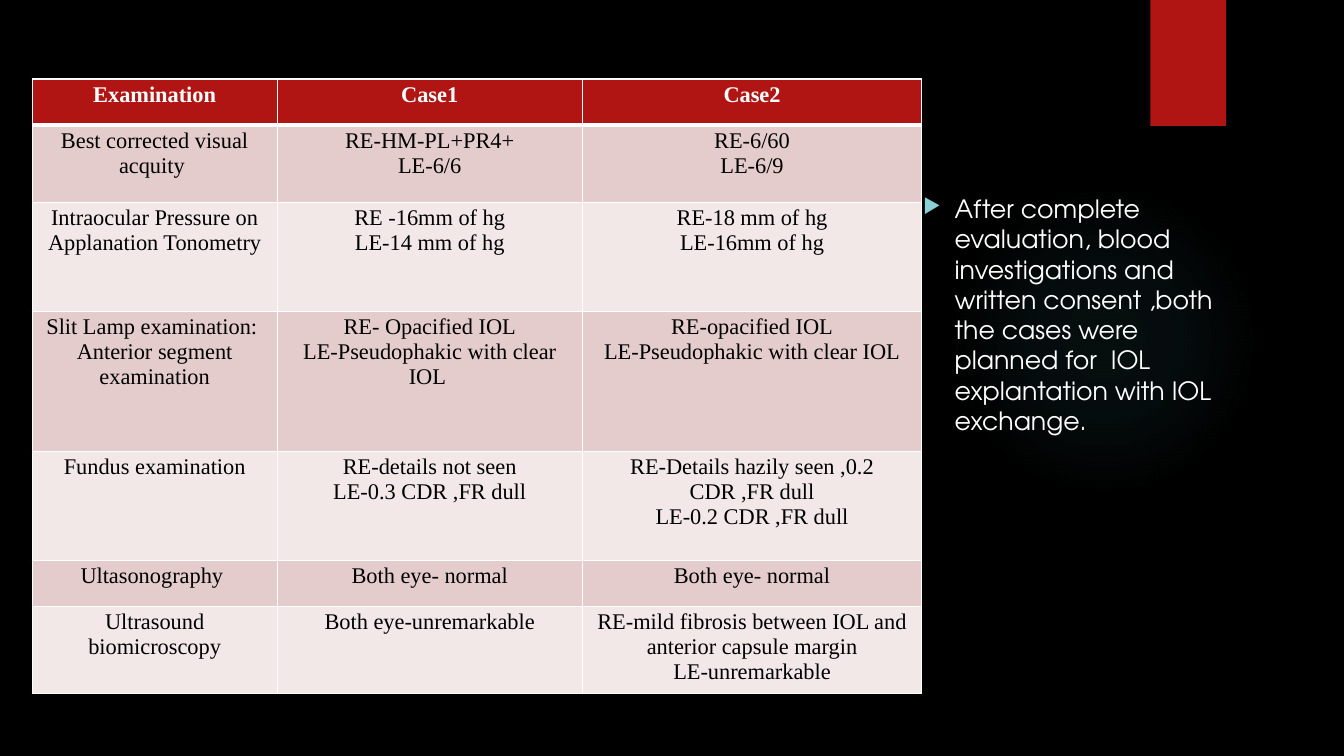
from lxml.etree import SubElement
from pptx import Presentation
from pptx.dml.color import RGBColor
from pptx.enum.shapes import MSO_SHAPE
from pptx.enum.text import PP_ALIGN
from pptx.oxml import parse_xml
from pptx.oxml.ns import qn
from pptx.util import Pt

ROWS = [
    (["Examination"], ["Case1"], ["Case2"]),
    (["Best corrected visual acquity "], ["RE-HM-PL+PR4+", "LE-6/6"], ["RE-6/60", "LE-6/9"]),
    (["Intraocular Pressure on Applanation Tonometry"],
     ["RE -16mm of hg", "LE-14 mm of hg"],
     ["RE-18 mm of hg", "LE-16mm of hg"]),
    (["Slit Lamp examination: ", "Anterior segment examination"],
     ["RE- Opacified IOL", "LE-Pseudophakic with clear IOL "],
     ["RE-opacified IOL", "LE-Pseudophakic with clear IOL"]),
    (["Fundus examination"],
     ["RE-details not seen", "LE-0.3 CDR ,FR dull"],
     ["RE-Details hazily seen ,0.2 CDR ,FR dull", "LE-0.2 CDR ,FR dull"]),
    (["Ultasonography "], ["Both eye- normal"], ["Both eye- normal"]),
    (["Ultrasound biomicroscopy"],
     ["Both eye-unremarkable"],
     ["RE-mild fibrosis between IOL and anterior capsule margin", "LE-unremarkable"]),
]
PLAN = ("After complete evaluation, blood investigations and written consent ,both "
        "the cases were planned for  IOL explantation with IOL exchange.")
COL_WIDTHS = [175, 218, 242.5]
ROW_HEIGHTS = [33, 55.4, 77.6, 100.2, 77.6, 33, 47.5]
GLOW_STOPS = [(0, 7), (36, 6), (69, 0)]
RED, WHITE, BLACK = "B01513", "FFFFFF", "000000"
BANDS = ["F2E8E7", "E4CCCC"]
A_NS = 'xmlns:a="http://schemas.openxmlformats.org/drawingml/2006/main"'


def rgb(value):
    return RGBColor.from_string(value)


def add_run(p, text, font, size, color, bold=False):
    r = p.add_run()
    r.text = text
    r.font.name = font
    r.font.size = Pt(size)
    r.font.bold = bold
    r.font.color.rgb = rgb(color)


def add_plain_shape(s, kind, *box):
    sp = s.shapes.add_shape(kind, *map(Pt, box))
    sp.shadow.inherit = False
    sp.line.fill.background()
    return sp


def add_glow(s):
    sp = add_plain_shape(s, MSO_SHAPE.OVAL, 677.5, 131.8, 221.8, 221.8)
    stops = "".join(
        f'<a:gs pos="{pos * 1000}"><a:srgbClr val="50B9C1">'
        f'<a:alpha val="{alpha * 1000}"/></a:srgbClr></a:gs>'
        for pos, alpha in GLOW_STOPS)
    fill = parse_xml(
        f'<a:gradFill {A_NS} rotWithShape="1"><a:gsLst>{stops}</a:gsLst>'
        '<a:path path="circle"><a:fillToRect l="50000" t="50000" r="50000" b="50000"/>'
        '</a:path></a:gradFill>')
    sp.element.spPr.find(qn("a:prstGeom")).addnext(fill)


def add_plan(s):
    tf = s.shapes.add_textbox(Pt(652.3), Pt(134.6), Pt(229), Pt(255.6)).text_frame
    tf.word_wrap = True
    p = tf.paragraphs[0]
    pPr = p._p.get_or_add_pPr()
    pPr.set("marL", str(Pt(22.5)))
    pPr.set("indent", str(Pt(-22.5)))
    color = SubElement(pPr, qn("a:buClr"))
    SubElement(color, qn("a:srgbClr"), val="8AD0D6")
    SubElement(pPr, qn("a:buSzPct"), val="80000")
    SubElement(pPr, qn("a:buChar"), char="▶")
    add_run(p, PLAN, "TeX Gyre Adventor", 18, WHITE)


def set_borders(cell, row):
    widths = {"L": 1, "R": 1, "T": 3 if row == 1 else 1, "B": 3 if row == 0 else 1}
    tcPr = cell._tc.get_or_add_tcPr()
    for i, (side, width) in enumerate(widths.items()):
        tcPr.insert(i, parse_xml(
            f'<a:ln{side} {A_NS} w="{Pt(width)}"><a:solidFill>'
            f'<a:srgbClr val="{WHITE}"/></a:solidFill></a:ln{side}>'))


def fill_cell(cell, lines, row):
    header = row == 0
    cell.fill.solid()
    cell.fill.fore_color.rgb = rgb(RED if header else BANDS[row % 2])
    cell.margin_left = cell.margin_right = Pt(4.5)
    cell.margin_top = cell.margin_bottom = Pt(2.25)
    set_borders(cell, row)
    tf = cell.text_frame
    for i, line in enumerate(lines):
        p = tf.add_paragraph() if i else tf.paragraphs[0]
        p.alignment = PP_ALIGN.CENTER
        add_run(p, line, "Times New Roman", 16, WHITE if header else BLACK, header)


def add_findings(s):
    table = s.shapes.add_table(
        len(ROWS), len(COL_WIDTHS), Pt(23), Pt(56.4),
        Pt(sum(COL_WIDTHS)), Pt(sum(ROW_HEIGHTS))).table
    for column, width in zip(table.columns, COL_WIDTHS):
        column.width = Pt(width)
    for i, (cells, height) in enumerate(zip(ROWS, ROW_HEIGHTS)):
        table.rows[i].height = Pt(height)
        for j, lines in enumerate(cells):
            fill_cell(table.cell(i, j), lines, i)


def main():
    prs = Presentation()
    prs.slide_width, prs.slide_height = Pt(960), Pt(540)
    s = prs.slides.add_slide(prs.slide_layouts[6])
    s.background.fill.solid()
    s.background.fill.fore_color.rgb = rgb(BLACK)
    add_glow(s)
    tab = add_plain_shape(s, MSO_SHAPE.RECTANGLE, 821.8, 0, 54, 90)
    tab.fill.solid()
    tab.fill.fore_color.rgb = rgb(RED)
    add_plan(s)
    add_findings(s)
    prs.save("out.pptx")


if __name__ == "__main__":
    main()
